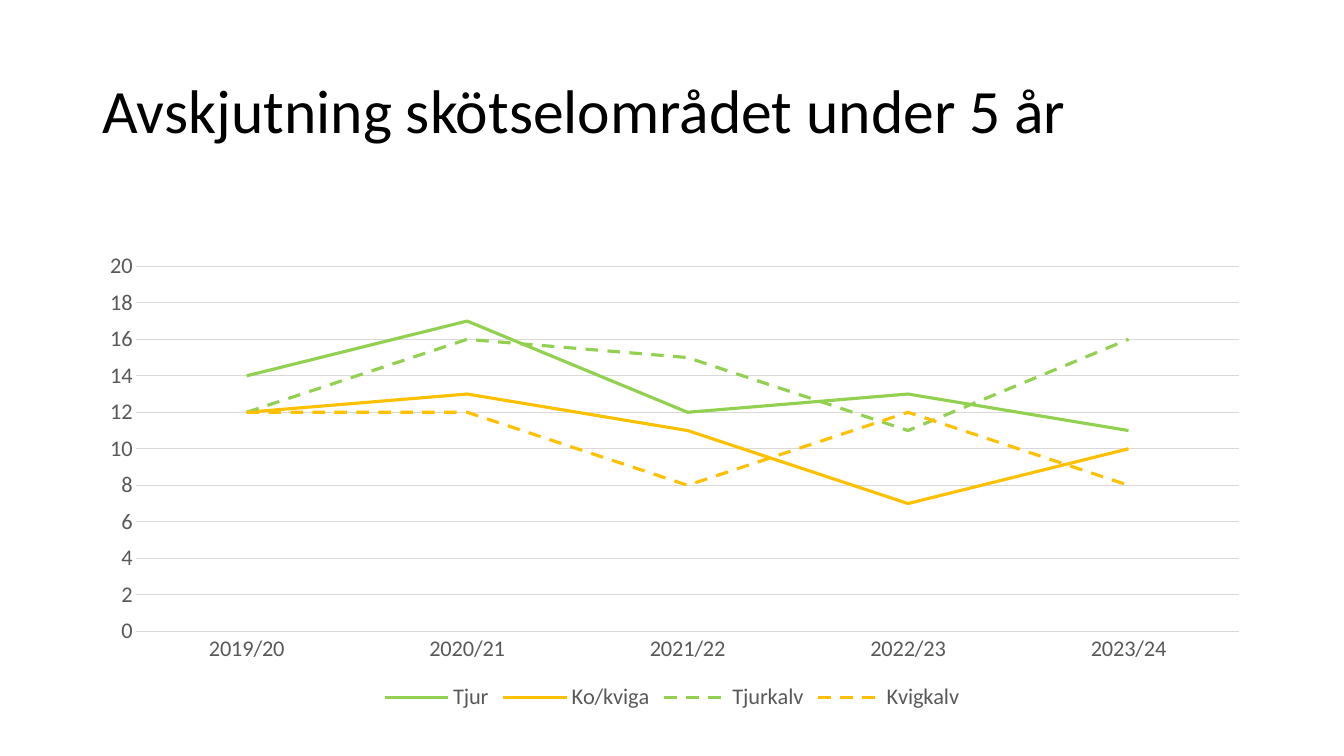
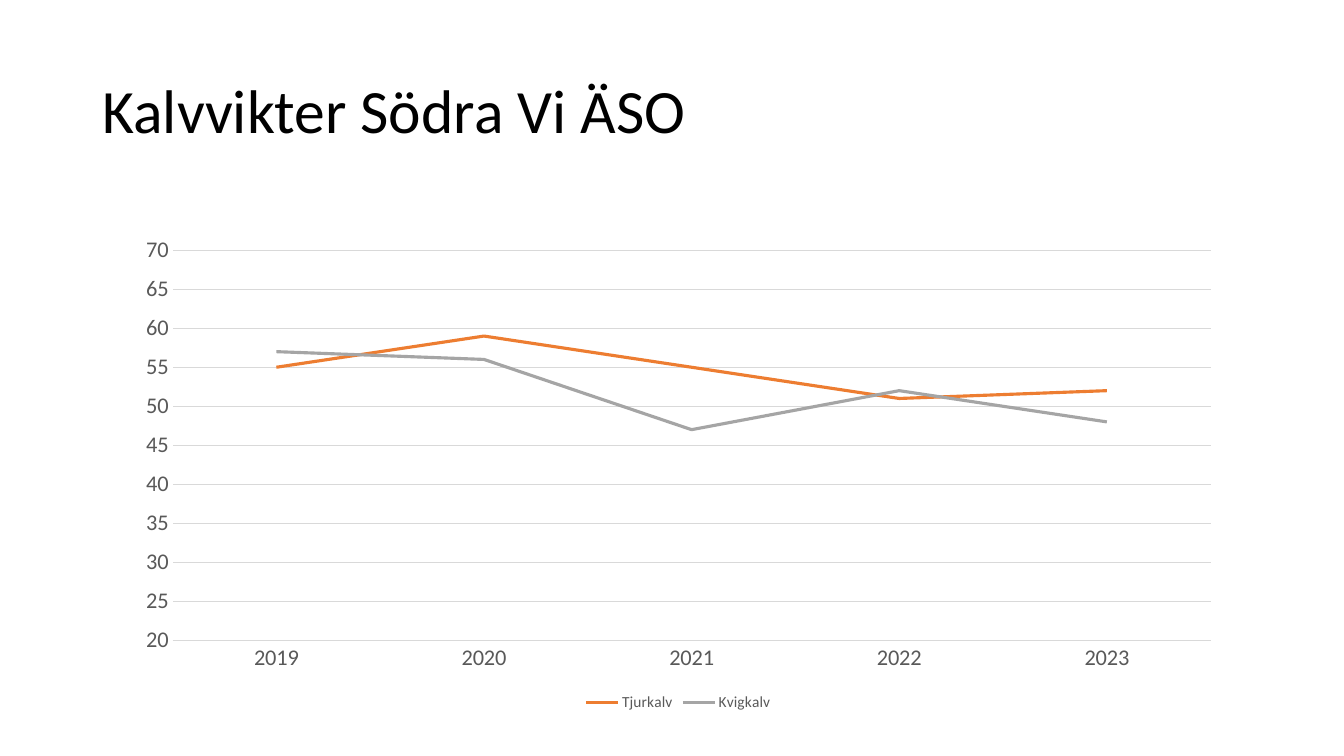
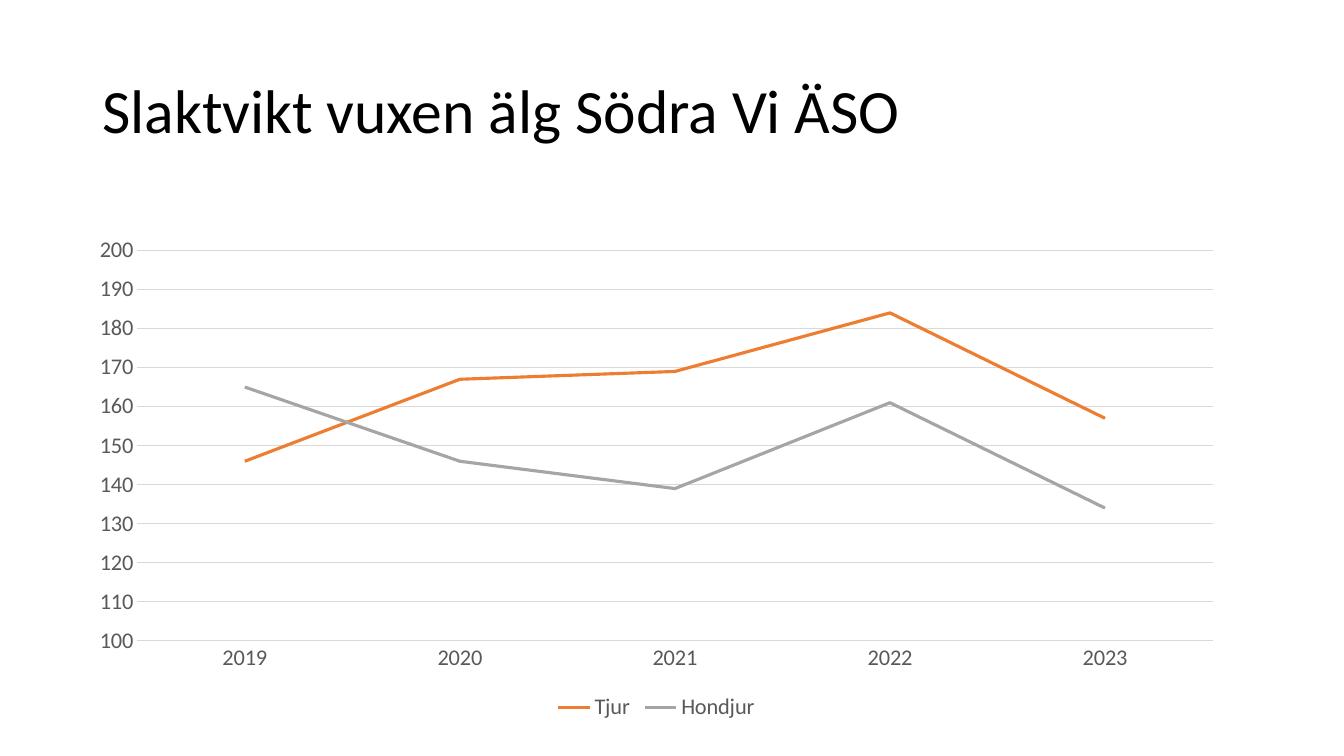
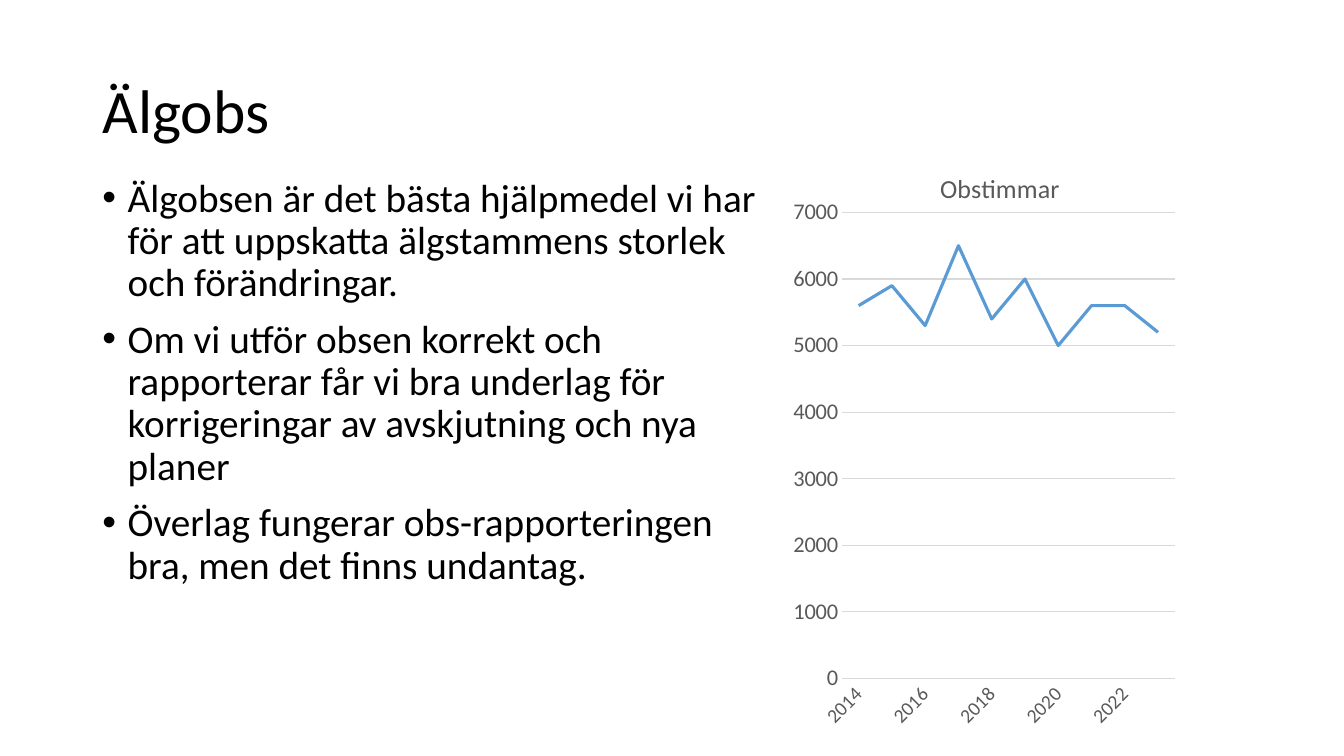
"""Build four slides on moose harvest, weights and observations as native line charts."""
from dataclasses import dataclass

import lxml.etree
import pptx
import pptx.chart.data
import pptx.dml.color
import pptx.enum.chart
import pptx.enum.dml
import pptx.enum.text
import pptx.oxml
import pptx.oxml.ns
import pptx.util

Pt = pptx.util.Pt
qn = pptx.oxml.ns.qn


@dataclass(frozen=True)
class Theme:
    font: str = "Calibri"
    text: str = "000000"
    muted: str = "595959"
    rule: str = "D9D9D9"
    green: str = "92D050"
    gold: str = "FFC000"
    orange: str = "ED7D31"
    grey: str = "A5A5A5"
    blue: str = "5B9BD5"
    title: float = 44
    body: float = 28
    chart_title: float = 18.6
    label: float = 16
    small_label: float = 14
    small_legend: float = 11
    series_line: float = 2.25
    rule_line: float = 0.75


T = Theme()
SLIDE_SIZE = (960, 540)
TITLE_BOX = (66, 28.8, 828, 104.4)
BODY_BOX = (66, 123.8, 485.3, 362.2)
BULLET_INDENT = 18
YEARS = ["2019", "2020", "2021", "2022", "2023"]

SLIDES = [
    {
        "title": "Avskjutning skötselområdet under 5 år",
        "box": (66, 144, 828, 367.2),
        "plot": (0.038, 0.126, 0.951, 0.71),
        "scale": (0, 20, 2),
        "legend": T.label,
        "cats": ["2019/20", "2020/21", "2021/22", "2022/23", "2023/24"],
        "series": [
            ("Tjur", [14, 17, 12, 13, 11], T.green, False),
            ("Ko/kviga", [12, 13, 11, 7, 10], T.gold, False),
            ("Tjurkalv", [12, 16, 15, 11, 16], T.green, True),
            ("Kvigkalv", [12, 12, 8, 12, 8], T.gold, True),
        ],
    },
    {
        "title": "Kalvvikter Södra Vi ÄSO",
        "box": (88.6, 162, 792, 349.2),
        "scale": (20, 70, 5),
        "legend": T.small_legend,
        "cats": YEARS,
        "series": [
            ("Tjurkalv", [55, 59, 55, 51, 52], T.orange, False),
            ("Kvigkalv", [57, 56, 47, 52, 48], T.grey, False),
        ],
    },
    {
        "title": "Slaktvikt vuxen älg Södra Vi ÄSO",
        "box": (54.7, 162, 828, 356.4),
        "scale": (100, 200, 10),
        "legend": T.label,
        "cats": YEARS,
        "series": [
            ("Tjur", [146, 167, 169, 184, 157], T.orange, False),
            ("Hondjur", [165, 146, 139, 161, 134], T.grey, False),
        ],
    },
    {
        "title": "Älgobs",
        "bullets": [
            "Älgobsen är det bästa hjälpmedel vi har för att uppskatta älgstammens storlek och förändringar.",
            "Om vi utför obsen korrekt och rapporterar får vi bra underlag för korrigeringar av avskjutning och nya planer",
            "Överlag fungerar obs-rapporteringen bra, men det finns undantag.",
        ],
        "box": (550.8, 105.8, 326.9, 421.9),
        "plot": (0.155, 0.109, 0.727, 0.789),
        "scale": (0, 7000, 1000),
        "cat_size": T.small_label,
        "chart_title": "Obstimmar",
        "cats": [str(year) for year in range(2014, 2024)],
        "series": [
            ("Obstimmar", [5600, 5900, 5300, 6500, 5400, 6000, 5000, 5600, 5600, 5200], T.blue, False),
        ],
    },
]


def rgb(color):
    return pptx.dml.color.RGBColor.from_string(color)


def style_font(font, size, color):
    font.name, font.size, font.bold = T.font, Pt(size), False
    font.color.rgb = rgb(color)


def style_line(line, color, width):
    line.color.rgb = rgb(color)
    line.width = Pt(width)


def fill_placeholder(sp, box, paragraphs, size, anchor):
    sp.left, sp.top, sp.width, sp.height = map(Pt, box)
    tf = sp.text_frame
    tf.text = "\n".join(paragraphs)
    tf.word_wrap = True
    tf.auto_size = pptx.enum.text.MSO_AUTO_SIZE.NONE
    tf.vertical_anchor = anchor
    for p in tf.paragraphs:
        p.alignment = pptx.enum.text.PP_ALIGN.LEFT
        p.line_spacing = 0.9
        for r in p.runs:
            style_font(r.font, size, T.text)
    return tf


def add_bullets(sp, bullets):
    tf = fill_placeholder(sp, BODY_BOX, bullets, T.body, pptx.enum.text.MSO_ANCHOR.TOP)
    for p in tf.paragraphs:
        p.space_before = Pt(10)
        pPr = p._p.get_or_add_pPr()
        pPr.set("marL", str(Pt(BULLET_INDENT)))
        pPr.set("indent", str(-Pt(BULLET_INDENT)))
        lxml.etree.SubElement(pPr, qn("a:buFont"), typeface="Arial")
        lxml.etree.SubElement(pPr, qn("a:buChar"), char="•")


def set_plot_layout(chart, fractions):
    area = chart._chartSpace.find(".//" + qn("c:plotArea"))
    for old in area.findall(qn("c:layout")):
        area.remove(old)
    layout = lxml.etree.Element(qn("c:layout"))
    manual = lxml.etree.SubElement(layout, qn("c:manualLayout"))
    settings = [("layoutTarget", "inner"), ("xMode", "edge"), ("yMode", "edge")]
    for tag, value in settings + list(zip("xywh", fractions)):
        lxml.etree.SubElement(manual, qn("c:" + tag), val=str(value))
    area.insert(0, layout)


def style_axes(chart, spec):
    cat, val = chart.category_axis, chart.value_axis
    for axis, size in ((cat, spec.get("cat_size", T.label)), (val, T.label)):
        axis.major_tick_mark = axis.minor_tick_mark = pptx.enum.chart.XL_TICK_MARK.NONE
        style_font(axis.tick_labels.font, size, T.muted)
    auto_rotation = "-60000000"
    cat._element.find(qn("c:txPr")).find(qn("a:bodyPr")).set("rot", auto_rotation)
    style_line(cat.format.line, T.rule, T.rule_line)
    val.format.line.fill.background()
    val.minimum_scale, val.maximum_scale, val.major_unit = spec["scale"]
    val.tick_labels.number_format = "0"
    val.tick_labels.number_format_is_linked = False
    val.has_major_gridlines = True
    style_line(val.major_gridlines.format.line, T.rule, T.rule_line)


def add_line_chart(s, spec):
    data = pptx.chart.data.CategoryChartData()
    data.categories = spec["cats"]
    for name, values, _, _ in spec["series"]:
        data.add_series(name, values)
    kind = pptx.enum.chart.XL_CHART_TYPE.LINE
    chart = s.shapes.add_chart(kind, *map(Pt, spec["box"]), data).chart
    style_font(chart.font, 10, T.text)
    chart.plots[0].vary_by_categories = False
    for series, (_, _, color, dashed) in zip(chart.plots[0].series, spec["series"]):
        series.smooth = False
        style_line(series.format.line, color, T.series_line)
        if dashed:
            series.format.line.dash_style = pptx.enum.dml.MSO_LINE.DASH
    style_axes(chart, spec)
    chart.has_title = "chart_title" in spec
    if chart.has_title:
        tf = chart.chart_title.text_frame
        tf.text = spec["chart_title"]
        style_font(tf.paragraphs[0].runs[0].font, T.chart_title, T.muted)
        chart.chart_title.include_in_layout = False
    chart.has_legend = "legend" in spec
    if chart.has_legend:
        chart.legend.position = pptx.enum.chart.XL_LEGEND_POSITION.BOTTOM
        chart.legend.include_in_layout = False
        style_font(chart.legend.font, spec["legend"], T.muted)
    if "plot" in spec:
        set_plot_layout(chart, spec["plot"])


def main():
    prs = pptx.Presentation()
    prs.slide_width, prs.slide_height = map(Pt, SLIDE_SIZE)
    content_layout, title_only = prs.slide_layouts[1], prs.slide_layouts[5]
    for spec in SLIDES:
        s = prs.slides.add_slide(content_layout if "bullets" in spec else title_only)
        middle = pptx.enum.text.MSO_ANCHOR.MIDDLE
        fill_placeholder(s.shapes.title, TITLE_BOX, [spec["title"]], T.title, middle)
        if "bullets" in spec:
            add_bullets(s.placeholders[1], spec["bullets"])
        add_line_chart(s, spec)
    prs.save("out.pptx")


if __name__ == "__main__":
    main()
